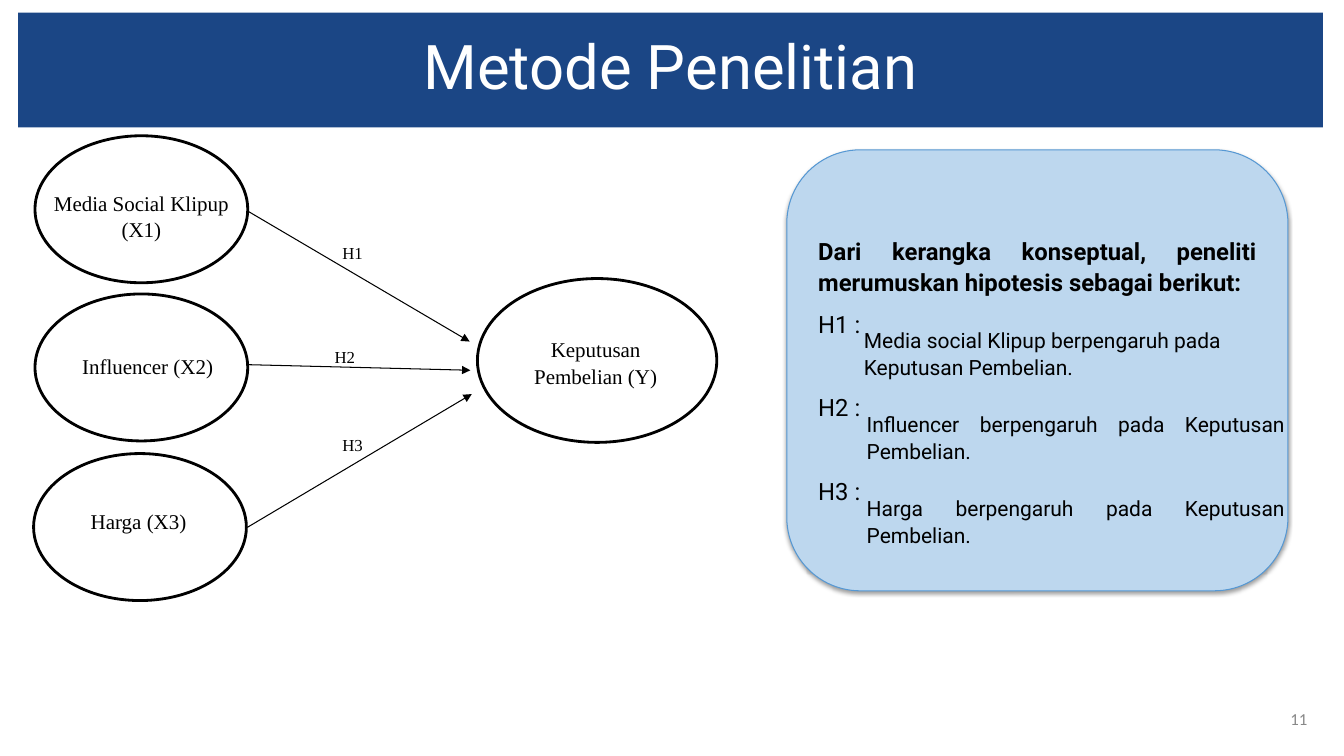
from lxml import etree
from pptx import Presentation, util as u
from pptx.dml.color import RGBColor
from pptx.enum import shapes, text
from pptx.oxml.ns import qn

HUES = {"navy": "1B4685", "sky": "BDD7EE", "edge": "5698D3",
        "ink": "000000", "white": "FFFFFF", "grey": "888888"}
FONTS = {"sans": "Roboto", "serif": "Times New Roman", "plain": "Calibri"}
ALIGN = text.PP_ALIGN
KINDS = shapes.MSO_SHAPE


class Deck:
    """Holds the style and the current slide, and draws each kind of element."""

    def __init__(self, wide, high):
        self.prs = Presentation()
        self.prs.slide_width, self.prs.slide_height = u.Pt(wide), u.Pt(high)
        self.page = self.prs.slides.add_slide(self.prs.slide_layouts[5])

    def hue(self, name):
        return RGBColor.from_string(HUES[name])

    def paint(self, shape, fill=None, line=None, width=0.75):
        if fill:
            shape.fill.solid()
            shape.fill.fore_color.rgb = self.hue(fill)
        else:
            shape.fill.background()
        if line:
            shape.line.color.rgb = self.hue(line)
            shape.line.width = u.Pt(width)
        else:
            shape.line.fill.background()

    def say(self, frame, words, size, font="serif", color="ink", align=ALIGN.LEFT,
            bold=False, space=1.07, after=8, before=0, first=True):
        para = frame.paragraphs[0] if first else frame.add_paragraph()
        para.alignment, para.line_spacing = align, space
        para.space_before, para.space_after = u.Pt(before), u.Pt(after)
        run = para.add_run()
        run.text = words
        run.font.size, run.font.name, run.font.bold = u.Pt(size), FONTS[font], bold
        run.font.color.rgb = self.hue(color)

    def title(self, words, box):
        head = self.page.shapes.title
        head.left, head.top, head.width, head.height = map(u.Pt, box)
        self.paint(head, "navy")
        head.text_frame.word_wrap = True
        head.text_frame.vertical_anchor = text.MSO_ANCHOR.MIDDLE
        self.say(head.text_frame, words, 44, "sans", "white", ALIGN.CENTER,
                 space=0.9, after=0)

    def shape(self, kind, box, fill=None, line=None, width=0.75):
        form = self.page.shapes.add_shape(kind, *map(u.Pt, box))
        form.shadow.inherit = False
        self.paint(form, fill, line, width)
        form.text_frame.word_wrap = True
        return form

    def label(self, words, box, size, fill=None, anchor=text.MSO_ANCHOR.TOP, **look):
        note = self.page.shapes.add_textbox(*map(u.Pt, box))
        self.paint(note, fill)
        note.text_frame.word_wrap = True
        note.text_frame.vertical_anchor = anchor
        self.say(note.text_frame, words, size, **look)

    def arrow(self, *ends):
        link = self.page.shapes.add_connector(
            shapes.MSO_CONNECTOR.STRAIGHT, *map(u.Pt, ends))
        link.line.color.rgb = self.hue("ink")
        link.line.width = u.Pt(0.75)
        props = link._element.spPr
        etree.SubElement(props.find(qn("a:ln")), qn("a:tailEnd"), type="triangle")
        etree.SubElement(props, qn("a:effectLst"))

    def shade(self, form):
        glow = form._element.spPr.find(qn("a:effectLst"))
        drop = etree.SubElement(
            glow, qn("a:outerShdw"), blurRad=str(u.Pt(3.1)), dist=str(u.Pt(1.6)),
            dir="5400000", algn="ctr", rotWithShape="0")
        tone = etree.SubElement(drop, qn("a:srgbClr"), val=HUES["ink"])
        etree.SubElement(tone, qn("a:alpha"), val="38000")

    def panel(self, lead, tags, box):
        form = self.shape(KINDS.ROUNDED_RECTANGLE, box, "sky", "edge")
        self.shade(form)
        frame = form.text_frame
        frame.vertical_anchor = text.MSO_ANCHOR.MIDDLE
        self.say(frame, lead, 17, "sans", align=ALIGN.JUSTIFY, bold=True)
        for i, tag in enumerate(tags):
            self.say(frame, f"{tag} :", 17, "sans", align=ALIGN.JUSTIFY,
                     before=30 if i else 0, first=False)


def main():
    deck = Deck(960, 540)
    deck.title("Metode Penelitian", (13, 9, 932, 82))
    deck.label("11", (900, 499, 41, 29), 12, font="plain", color="grey",
               align=ALIGN.RIGHT, anchor=text.MSO_ANCHOR.MIDDLE, space=1, after=0)

    tags = ["H1", "H2", "H3"]
    deck.panel("Dari kerangka konseptual, peneliti merumuskan hipotesis sebagai berikut:",
               tags, (562, 107, 358, 315))

    nodes = [
        ("Influencer (X2)", (24, 248, 163, 44), "white", (25, 210, 152, 105)),
        ("Media Social Klipup (X1)", (25, 131, 152, 39), None, (25, 97, 152, 105)),
        ("Harga (X3)", (32, 358.5, 134, 36), None, (24, 324, 152, 105)),
        ("Keputusan Pembelian (Y)", (368, 235.5, 115, 40), None, (341, 199, 171, 117)),
    ]
    for words, box, fill, ring in nodes:
        deck.label(words, box, 15, fill, align=ALIGN.CENTER)
        deck.shape(KINDS.OVAL, ring, line="ink", width=2)

    links = [((176.5, 150.5, 335.5, 244), (237.5, 169)),
             ((177, 260.5, 336, 264.5), (232, 243)),
             ((177, 376.5, 337, 281.5), (237.5, 306))]
    for tag, (ends, spot) in zip(tags, links):
        deck.arrow(*ends)
        deck.label(tag, (*spot, 33, 24), 12)

    claims = [("Media social Klipup", 610, ALIGN.LEFT),
              ("Influencer", 612, ALIGN.JUSTIFY),
              ("Harga", 612, ALIGN.JUSTIFY)]
    for i, (cause, left, align) in enumerate(claims):
        deck.label(f"{cause} berpengaruh pada Keputusan Pembelian.",
                   (left, 229 + 60 * i, 313, 46), 15, font="sans", align=align)

    deck.prs.save("out.pptx")


if __name__ == "__main__":
    main()
